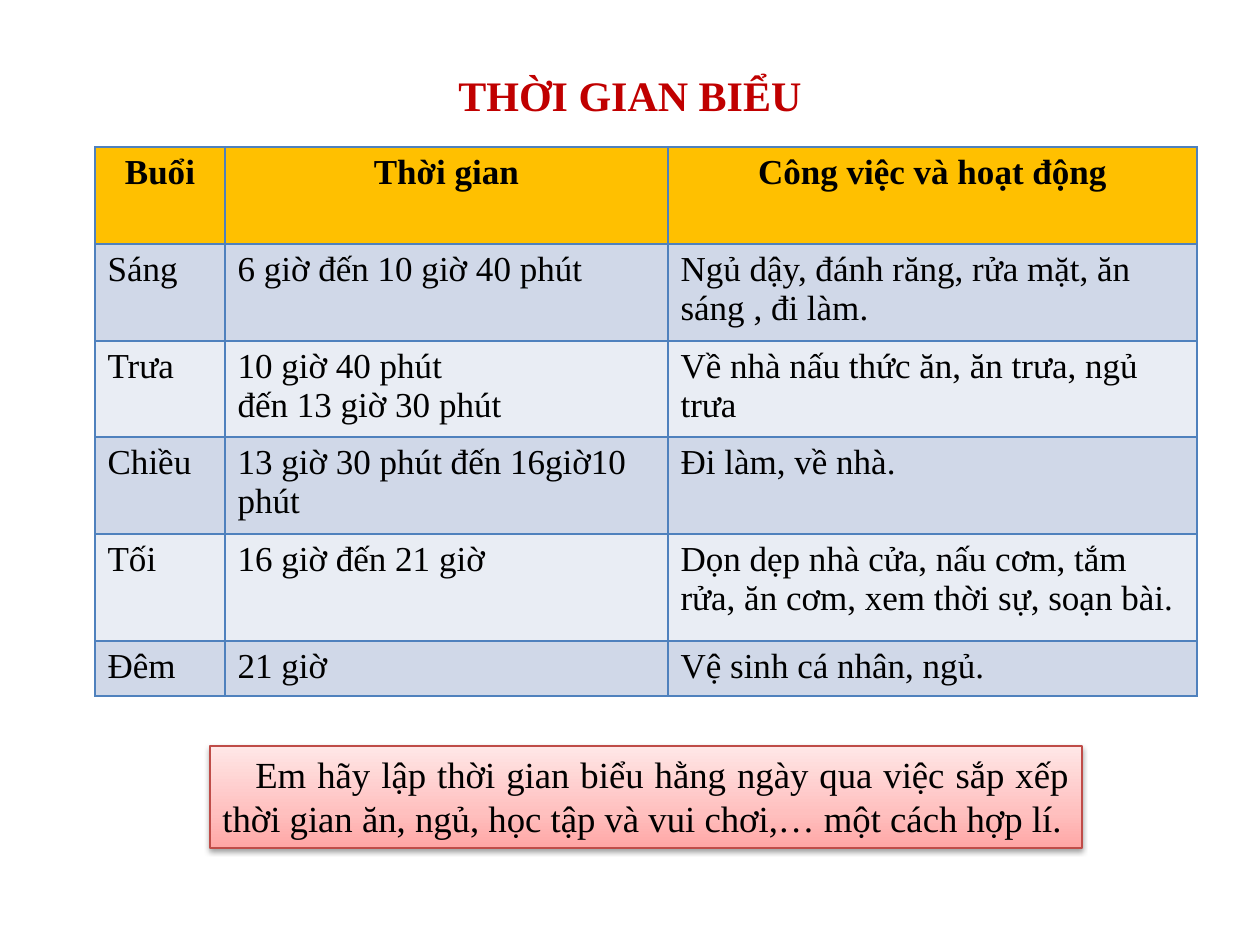
from lxml.etree import SubElement
from pptx import Presentation
from pptx.dml.color import RGBColor
from pptx.enum.shapes import MSO_SHAPE
from pptx.enum.text import MSO_ANCHOR, MSO_AUTO_SIZE, PP_ALIGN
from pptx.oxml import parse_xml
from pptx.oxml.ns import nsdecls, qn
from pptx.util import Emu, Pt

COLORS = {
    "title": "C00000", "text": "000000", "header": "FFC000",
    "odd": "D0D8E8", "even": "E9EDF4", "grid": "4F81BD",
    "box_line": "BF4C48", "shadow": "000000",
}
GRADIENT = [(0, "FFA6A5"), (35, "FFC0BF"), (100, "FFE7E7")]
FONT = "Times New Roman"
TITLE = "THỜI GIAN BIỂU"
ROWS = [
    ("Buổi", "Thời gian", "Công việc và hoạt động"),
    ("Sáng", "6 giờ đến 10 giờ 40 phút", "Ngủ dậy, đánh răng, rửa mặt, ăn sáng , đi làm."),
    ("Trưa", "10 giờ 40 phút\nđến 13 giờ 30 phút", "Về nhà nấu thức ăn, ăn trưa, ngủ trưa"),
    ("Chiều", "13 giờ 30 phút đến 16giờ10 phút", "Đi làm, về nhà."),
    ("Tối", "16 giờ đến 21 giờ", "Dọn dẹp nhà cửa, nấu cơm, tắm rửa, ăn cơm, xem thời sự, soạn bài."),
    ("Đêm", "21 giờ", "Vệ sinh cá nhân, ngủ."),
]
TASK = ("Em hãy lập thời gian biểu hằng ngày qua việc sắp xếp thời gian ăn, ngủ, "
        "học tập và vui chơi,… một cách hợp lí.")
COL_WIDTHS = [130, 443, 529]
ROW_HEIGHTS = [97, 97, 96, 97, 107, 55]


def px(n):
    return Emu(round(n * 914400 / 126))


def rgb(name):
    return RGBColor.from_string(COLORS[name])


def write(tf, text, size, color="text", bold=False, align=PP_ALIGN.LEFT):
    tf.word_wrap = True
    for i, line in enumerate(text.split("\n")):
        p = tf.paragraphs[0] if i == 0 else tf.add_paragraph()
        p.alignment = align
        r = p.add_run()
        r.text = line
        r.font.name, r.font.size, r.font.bold = FONT, Pt(size), bold
        r.font.color.rgb = rgb(color)


def add_borders(cell):
    tc_pr = cell._tc.get_or_add_tcPr()
    for i, side in enumerate(("lnL", "lnR", "lnT", "lnB")):
        tc_pr.insert(i, parse_xml(
            f'<a:{side} {nsdecls("a")} w="12700"><a:solidFill>'
            f'<a:srgbClr val="{COLORS["grid"]}"/></a:solidFill></a:{side}>'))


def add_title(s):
    sp = s.shapes.title
    sp.left, sp.top, sp.width, sp.height = map(px, (315, 63, 630, 63))
    tf = sp.text_frame
    tf.auto_size = MSO_AUTO_SIZE.NONE
    tf.vertical_anchor = MSO_ANCHOR.TOP
    write(tf, TITLE, 24, "title", True, PP_ALIGN.CENTER)


def add_schedule(s):
    table = s.shapes.add_table(len(ROWS), len(COL_WIDTHS), px(95), px(147),
                               px(sum(COL_WIDTHS)), px(sum(ROW_HEIGHTS))).table
    for col, width in zip(table.columns, COL_WIDTHS):
        col.width = px(width)
    for i, (row, height) in enumerate(zip(ROWS, ROW_HEIGHTS)):
        table.rows[i].height = px(height)
        header = i == 0
        fill = "header" if header else "odd" if i % 2 else "even"
        for j, text in enumerate(row):
            cell = table.cell(i, j)
            cell.fill.solid()
            cell.fill.fore_color.rgb = rgb(fill)
            add_borders(cell)
            write(cell.text_frame, text, 20, bold=header,
                  align=PP_ALIGN.CENTER if header else PP_ALIGN.LEFT)


def add_task(s):
    sp = s.shapes.add_shape(MSO_SHAPE.RECTANGLE, *map(px, (210, 746, 872, 102)))
    sp.line.color.rgb = rgb("box_line")
    sp.line.width = Pt(0.75)
    stops = "".join(f'<a:gs pos="{pos * 1000}"><a:srgbClr val="{color}"/></a:gs>'
                    for pos, color in GRADIENT)
    sp_pr = sp._element.spPr
    sp_pr.find(qn("a:prstGeom")).addnext(parse_xml(
        f'<a:gradFill {nsdecls("a")} rotWithShape="1"><a:gsLst>{stops}</a:gsLst>'
        '<a:lin ang="16200000" scaled="0"/></a:gradFill>'))
    sp.shadow.inherit = False
    shadow = SubElement(sp_pr.find(qn("a:effectLst")), qn("a:outerShdw"),
                        blurRad=str(Pt(3.1)), dist=str(Pt(1.6)), dir="5400000", rotWithShape="0")
    color = SubElement(shadow, qn("a:srgbClr"), val=COLORS["shadow"])
    SubElement(color, qn("a:alpha"), val="38000")
    tf = sp.text_frame
    tf.vertical_anchor = MSO_ANCHOR.TOP
    write(tf, TASK, 21, align=PP_ALIGN.JUSTIFY)
    tf.paragraphs[0]._p.get_or_add_pPr().set("indent", str(px(33)))


prs = Presentation()
prs.slide_width, prs.slide_height = px(1260), px(945)
s = prs.slides.add_slide(prs.slide_layouts[5])
add_title(s)
add_schedule(s)
add_task(s)
prs.save("out.pptx")
